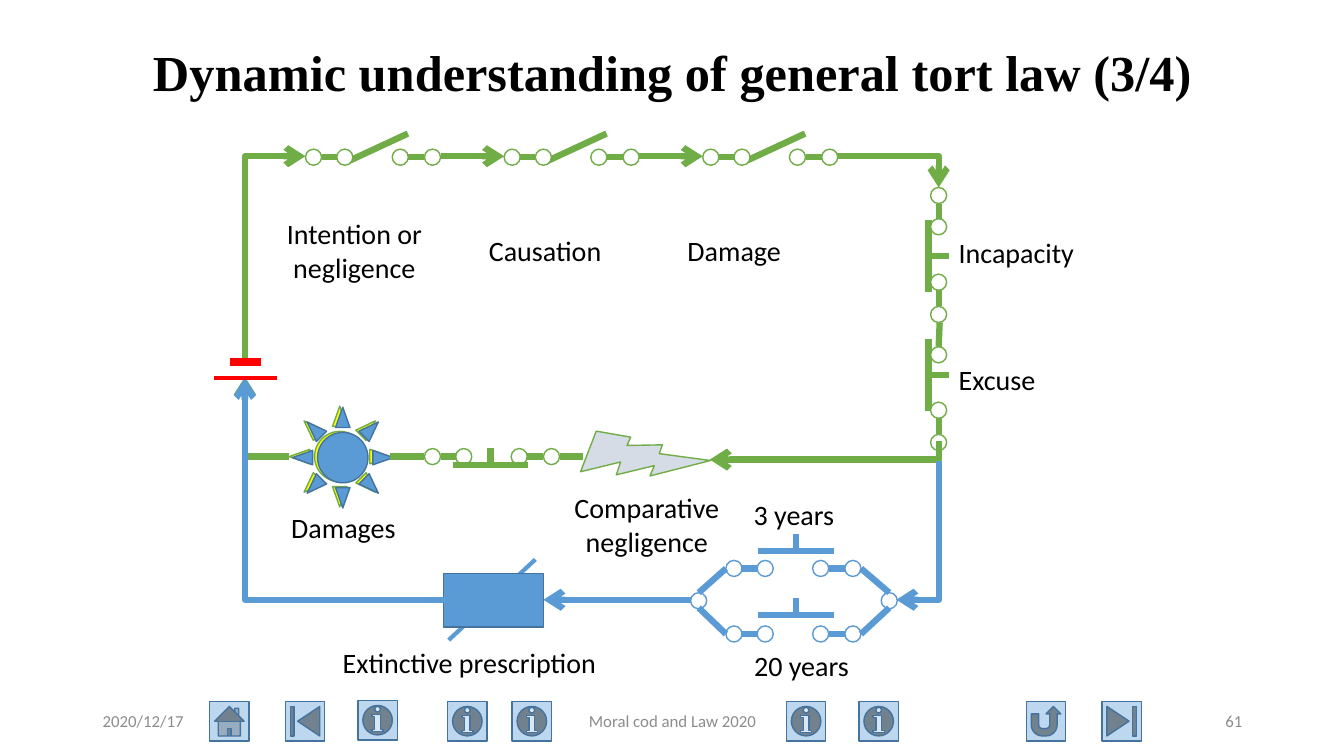
import pptx
import pptx.dml.color
import pptx.enum.shapes
import pptx.enum.text
import pptx.oxml.ns
import pptx.util
from lxml import etree

Inches, Pt = pptx.util.Inches, pptx.util.Pt
SHAPE = pptx.enum.shapes.MSO_SHAPE
CONNECTOR = pptx.enum.shapes.MSO_CONNECTOR
ALIGN = pptx.enum.text.PP_ALIGN
ANCHOR = pptx.enum.text.MSO_ANCHOR
qn = pptx.oxml.ns.qn

GREEN, BLUE, NAVY, RED = "70AD47", "5B9BD5", "43739E", "FF0000"
BLACK, GREY, WHITE = "000000", "8C8C8C", "FFFFFF"
WIRE = 4.5
CONTACT = 0.16
CONTACT_OFFSETS = (0, 0.31, 0.86, 1.18)
BUTTON = 0.39

TITLE = "Dynamic understanding of general tort law (3/4)"
FOOTERS = [  # text, left, width, alignment
    ("2020/12/17", 0.92, 3, ALIGN.LEFT),
    ("Moral cod and Law 2020", 4.42, 4.5, ALIGN.CENTER),
    ("61", 9.42, 3, ALIGN.RIGHT),
]
NAVIGATION = [  # button, left, top
    (SHAPE.ACTION_BUTTON_HOME, 2.08, 6.96),
    (SHAPE.ACTION_BUTTON_BEGINNING, 2.83, 6.96),
    (SHAPE.ACTION_BUTTON_RETURN, 10.18, 6.96),
    (SHAPE.ACTION_BUTTON_END, 10.93, 6.96),
    (SHAPE.ACTION_BUTTON_INFORMATION, 4.44, 6.96),
    (SHAPE.ACTION_BUTTON_INFORMATION, 7.8, 6.96),
    (SHAPE.ACTION_BUTTON_INFORMATION, 8.52, 6.96),
    (SHAPE.ACTION_BUTTON_INFORMATION, 5.08, 6.96),
    (SHAPE.ACTION_BUTTON_INFORMATION, 3.55, 6.95),
]
LABELS = [  # text, left, top, width, height, alignment
    ("Intention or negligence", 2.61, 2.1, 1.81, 0.88, ALIGN.CENTER),
    ("Causation", 4.75, 2.27, 1.81, 0.54, ALIGN.LEFT),
    ("Damage", 6.72, 2.27, 1.81, 0.54, ALIGN.LEFT),
    ("Incapacity", 9.41, 2.29, 1.97, 0.44, ALIGN.LEFT),
    ("Excuse", 9.41, 3.55, 1.97, 0.44, ALIGN.LEFT),
    ("Comparative negligence", 5.47, 4.82, 1.89, 0.74, ALIGN.CENTER),
    ("Damages", 2.79, 5.02, 1.35, 0.44, ALIGN.LEFT),
    ("3 years", 6.81, 4.89, 2.13, 0.44, ALIGN.CENTER),
    ("20 years", 6.18, 6.38, 3.54, 0.44, ALIGN.CENTER),
    ("Extinctive prescription", 3.3, 6.35, 3.16, 0.44, ALIGN.LEFT),
]
OPEN_SWITCHES = [3.03, 5, 6.97]
CLOSED_SWITCHES = [  # left, top, vertical, contacts shown from, colour
    (9.23, 1.86, True, 0, GREEN),
    (9.23, 3.13, True, 1, GREEN),
    (4.21, 4.45, False, 0, GREEN),
    (7.2, 5.56, False, 0, BLUE),
    (7.2, 6.21, False, 0, BLUE),
]
PUSH_BARS = [  # start, vertical, length, stem, colour
    ((9.21, 2.18), True, 0.72, 0.2, GREEN),
    ((9.21, 3.36), True, 0.72, 0.2, GREEN),
    ((4.49, 4.61), False, 0.75, -0.17, GREEN),
    ((7.52, 5.47), False, 0.75, -0.17, BLUE),
    ((7.52, 6.1), False, 0.75, -0.17, BLUE),
]
JUNCTIONS = [(6.85, 5.88), (8.74, 5.88)]
WIRES = [  # start, end, colour, width, arrow
    ((9.32, 3.2), (9.31, 3.44), GREEN, WIRE, None),
    ((8.54, 5.64), (8.82, 5.88), BLUE, WIRE, None),
    ((8.82, 6.03), (8.54, 6.29), BLUE, WIRE, None),
    ((7.2, 5.64), (6.93, 5.88), BLUE, WIRE, None),
    ((6.93, 6.03), (7.2, 6.29), BLUE, WIRE, None),
    ((4.37, 1.55), (5, 1.55), GREEN, WIRE, "tailEnd"),
    ((6.34, 1.55), (6.97, 1.55), GREEN, WIRE, "tailEnd"),
    ((5.78, 4.53), (5.55, 4.53), GREEN, WIRE, None),
    ((4.21, 4.53), (3.87, 4.53), GREEN, WIRE, None),
    ((6.85, 5.95), (5.39, 5.95), BLUE, WIRE, "tailEnd"),
]
CORNERS = [  # horizontal end, vertical end, colour, arrow
    ((3.03, 1.55), (2.43, 3.59), GREEN, "headEnd"),
    ((8.3, 1.55), (9.31, 1.86), GREEN, "tailEnd"),
    ((7.04, 4.56), (9.31, 4.38), GREEN, "headEnd"),
    ((2.87, 4.53), (2.43, 3.74), GREEN, "tailEnd"),
    ((8.89, 5.95), (9.31, 4.57), BLUE, "headEnd"),
    ((4.4, 5.95), (2.43, 3.75), BLUE, "tailEnd"),
]
BATTERY = [  # start, end, colour, width, arrow
    ((2.12, 3.75), (2.75, 3.75), RED, 3, None),
    ((2.28, 3.59), (2.59, 3.59), RED, 6, None),
]

deck = pptx.Presentation()
deck.slide_width, deck.slide_height = Inches(13.33), Inches(7.5)
slide = deck.slides.add_slide(deck.slide_layouts[6])


def rgb(hex_colour):
    return pptx.dml.color.RGBColor.from_string(hex_colour)


def shape(kind, left, top, width, height, fill, outline, rotation=0):
    part = slide.shapes.add_shape(
        kind, Inches(left), Inches(top), Inches(width), Inches(height))
    part.shadow.inherit = False
    part.fill.solid()
    part.fill.fore_color.rgb = rgb(fill)
    part.line.color.rgb = rgb(outline)
    part.line.width = Pt(1)
    part.rotation = rotation


def contact(left, top, colour):
    shape(SHAPE.FLOWCHART_CONNECTOR, left, top, CONTACT, CONTACT, WHITE, colour)


def wire(start, end, colour, width=WIRE, arrow=None, corner=False):
    """Straight line, or one right-angle bend that leaves start horizontally."""
    kind = CONNECTOR.ELBOW if corner else CONNECTOR.STRAIGHT
    line = slide.shapes.add_connector(kind, *map(Inches, start + end))
    line.line.color.rgb = rgb(colour)
    line.line.width = Pt(width)
    properties = line._element.spPr
    if corner:
        properties.find(qn("a:prstGeom")).set("prst", "bentConnector2")
    if arrow:
        etree.SubElement(properties.find(qn("a:ln")), qn("a:" + arrow), type="arrow")
    etree.SubElement(properties, qn("a:effectLst"))


def text(words, left, top, width, height, align, size=20, colour=BLACK,
         font="Calibri", bold=False, anchor=ANCHOR.TOP):
    frame = slide.shapes.add_textbox(
        Inches(left), Inches(top), Inches(width), Inches(height)).text_frame
    frame.word_wrap = True
    frame.vertical_anchor = anchor
    frame.text = words
    paragraph = frame.paragraphs[0]
    paragraph.alignment = align
    style = paragraph.runs[0].font
    style.name, style.size, style.bold = font, Pt(size), bold
    style.color.rgb = rgb(colour)


def switch(left, top, vertical, first, colour):
    """Four contacts in a row, with a lead joining each outer pair."""
    def along(distance, across=0.0):
        return ((left + across, top + distance) if vertical
                else (left + distance, top + across))

    for offset in CONTACT_OFFSETS[first:]:
        contact(*along(offset), colour)
    for number in range(first * 2, 4, 2):
        lead_start = CONTACT_OFFSETS[number] + CONTACT
        wire(along(lead_start, CONTACT / 2),
             along(CONTACT_OFFSETS[number + 1], CONTACT / 2), colour)


def push_bar(start, vertical, length, stem, colour):
    x, y = start
    if vertical:
        end, middle, tip = (x, y + length), (x, y + length / 2), (x + stem, y + length / 2)
    else:
        end, middle, tip = (x + length, y), (x + length / 2, y), (x + length / 2, y + stem)
    wire(start, end, colour)
    wire(middle, tip, colour)


for button, left, top in NAVIGATION:
    shape(button, left, top, BUTTON, BUTTON, "BDD7EE", NAVY)
text(TITLE, 0.92, 0.4, 11.5, 0.62, ALIGN.CENTER, 36,
     font="Times New Roman", bold=True, anchor=ANCHOR.MIDDLE)
for words, left, width, align in FOOTERS:
    text(words, left, 6.95, width, 0.4, align, 12, GREY, anchor=ANCHOR.MIDDLE)

for left in OPEN_SWITCHES:
    shape(SHAPE.RECTANGLE, left + 0.39, 1.44, 0.65, 0.05, GREEN, GREEN, 335.1)
    switch(left, 1.48, False, 0, GREEN)
for bar in PUSH_BARS[:2]:
    push_bar(*bar)
shape(SHAPE.SUN, 2.87, 4.03, 1, 1, "FFFF00", GREEN)
shape(SHAPE.SUN, 2.9, 4.04, 1, 1, BLUE, NAVY)
shape(SHAPE.LIGHTNING_BOLT, 5.84, 4.06, 1, 1, "D6DCE5", GREEN, 315.7)
for closed_switch in CLOSED_SWITCHES:
    switch(*closed_switch)
for bar in PUSH_BARS[2:]:
    push_bar(*bar)
for left, top in JUNCTIONS:
    contact(left, top, BLUE)
wire((5.31, 5.55), (4.45, 6.35), BLUE, 3)
shape(SHAPE.RECTANGLE, 4.4, 5.69, 0.99, 0.53, BLUE, NAVY)
for label in LABELS:
    text(*label)
for connection in WIRES:
    wire(*connection)
for start, end, colour, arrow in CORNERS:
    wire(start, end, colour, arrow=arrow, corner=True)
for plate in BATTERY:
    wire(*plate)

deck.save("out.pptx")
